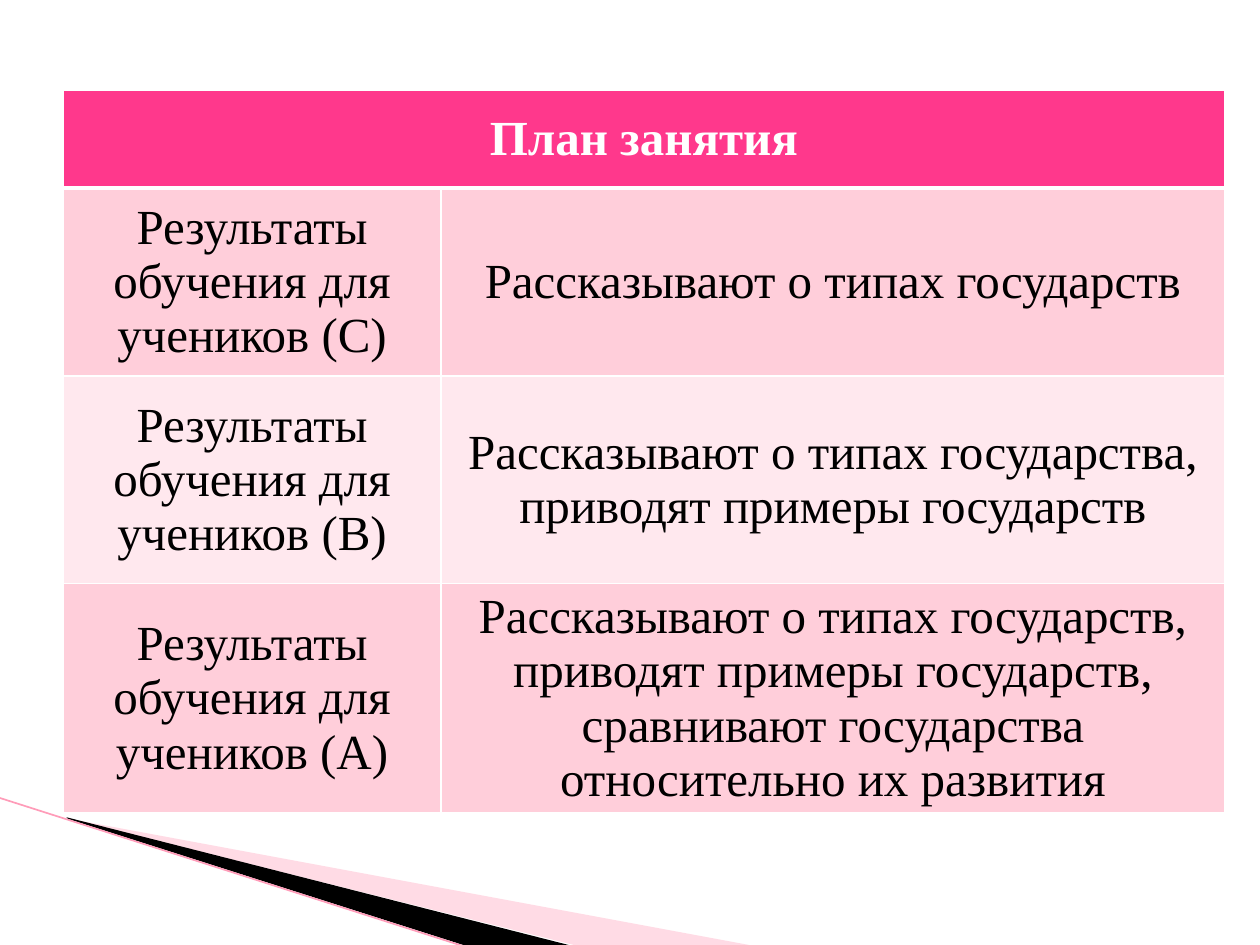
from lxml import etree
from pptx import Presentation
from pptx.dml.color import RGBColor
from pptx.enum.shapes import MSO_CONNECTOR
from pptx.enum.text import MSO_ANCHOR, PP_ALIGN
from pptx.oxml.ns import qn
from pptx.util import Pt


def color(hex_value):
    return RGBColor.from_string(hex_value)


def write(cell, text, size=28, ink="000000", bold=False):
    """Put centred text into a table cell."""
    cell.vertical_anchor = MSO_ANCHOR.MIDDLE
    paragraph = cell.text_frame.paragraphs[0]
    paragraph.alignment = PP_ALIGN.CENTER
    run = paragraph.add_run()
    run.text = text
    run.font.name = "Times New Roman"
    run.font.size = Pt(size)
    run.font.bold = bold
    run.font.color.rgb = color(ink)


prs = Presentation()
prs.slide_width, prs.slide_height = Pt(720), Pt(540)
slide = prs.slides.add_slide(prs.slide_layouts[6])

# Corner wedges: outline in points, fill, opacity in percent
wedges = [
    ([(39.6, 468.5), (428.4, 540.5), (328.5, 540.5), (39.6, 468)], "FFA5BF", 40),
    ([(38.2, 467.3), (329, 540.7), (267.8, 541.2), (38.9, 468)], "000000", 100),
]
for corners, fill, opacity in wedges:
    builder = slide.shapes.build_freeform(*corners[0], scale=Pt(1))
    builder.add_line_segments(corners[1:], close=True)
    wedge = builder.convert_to_shape()
    wedge.shadow.inherit = False
    wedge.fill.solid()
    wedge.fill.fore_color.rgb = color(fill)
    wedge.line.fill.background()
    if opacity < 100:
        fill_color = wedge.fill._xPr.find(qn("a:solidFill"))[0]
        etree.SubElement(fill_color, qn("a:alpha"), val=str(opacity * 1000))

edge = slide.shapes.add_connector(
    MSO_CONNECTOR.STRAIGHT, Pt(-0.7), Pt(455.8), Pt(267.1), Pt(541.4))
edge.line.color.rgb = color("FF9CB9")
edge.line.width = Pt(0.95)
etree.SubElement(edge._element.spPr, qn("a:effectLst"))

# Lesson plan
plan = [
    ("План занятия", ""),
    ("Результаты обучения для учеников (С)", "Рассказывают о типах государств"),
    ("Результаты обучения для учеников (В)",
     "Рассказывают о типах государства, приводят примеры государств"),
    ("Результаты обучения для учеников (А)",
     "Рассказывают о типах государств, приводят примеры государств, "
     "сравнивают государства относительно их развития"),
]
row_heights = [56, 107.5, 118.5, 130]
row_fills = ["FF388C", "FFCEDA", "FFE8EE", "FFCEDA"]
column_widths = [216, 447.8]

table = slide.shapes.add_table(
    len(plan), 2, Pt(36), Pt(51.5), Pt(sum(column_widths)), Pt(sum(row_heights))).table
for column, width in zip(table.columns, column_widths):
    column.width = Pt(width)
table.cell(0, 0).merge(table.cell(0, 1))

for r, (texts, height, fill) in enumerate(zip(plan, row_heights, row_fills)):
    table.rows[r].height = Pt(height)
    for c, text in enumerate(texts):
        cell = table.cell(r, c)
        if text:
            write(cell, text, ink="000000" if r else "FFFFFF", bold=r == 0)
        properties = cell._tc.get_or_add_tcPr()
        for side in "LRTB":
            under_header = (r, side) in [(0, "B"), (1, "T")]
            border = etree.SubElement(
                properties, qn(f"a:ln{side}"), w=str(Pt(3 if under_header else 1)))
            border_fill = etree.SubElement(border, qn("a:solidFill"))
            etree.SubElement(border_fill, qn("a:srgbClr"), val="FFFFFF")
        cell.fill.solid()
        cell.fill.fore_color.rgb = color(fill)

prs.save("out.pptx")
